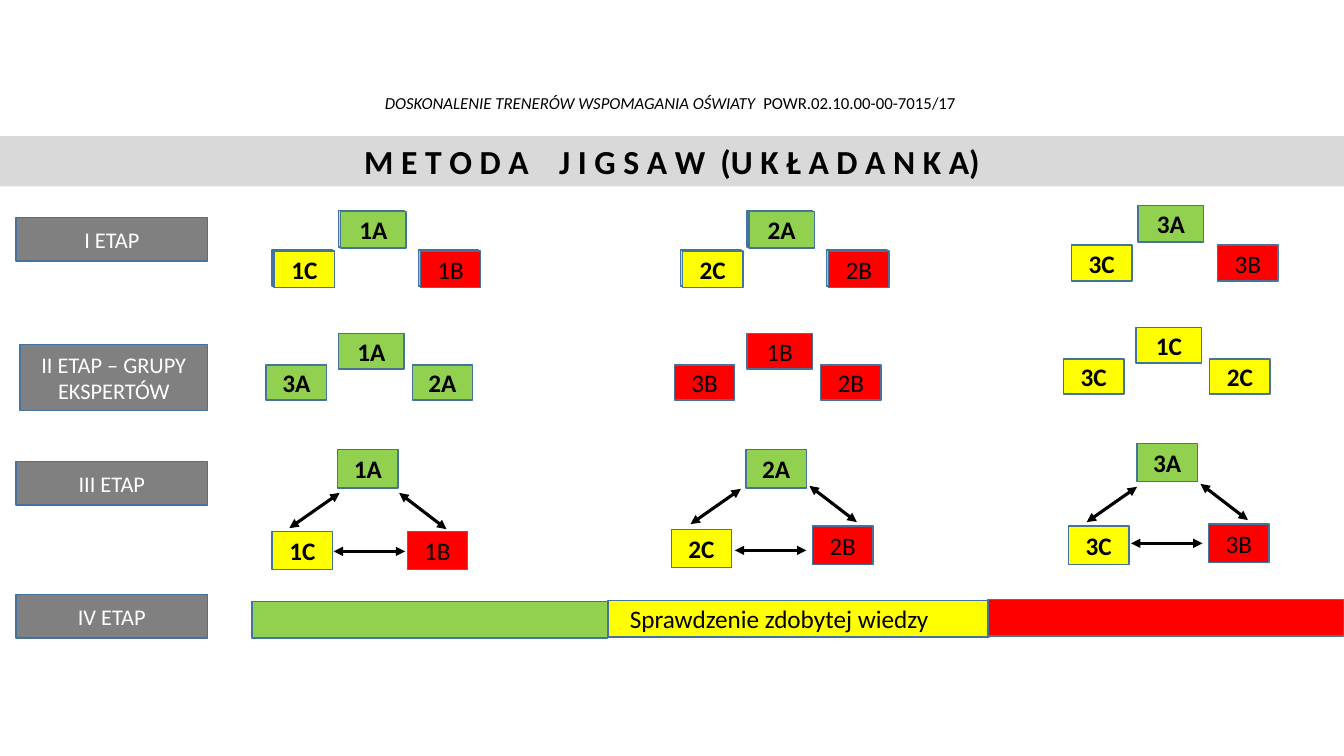
from dataclasses import dataclass

from lxml import etree
from pptx import Presentation
from pptx.dml.color import RGBColor
from pptx.enum.shapes import MSO_CONNECTOR, MSO_SHAPE
from pptx.enum.text import MSO_ANCHOR, PP_ALIGN
from pptx.oxml.ns import qn
from pptx.util import Inches, Pt

RECT = MSO_SHAPE.RECTANGLE
STRAIGHT = MSO_CONNECTOR.STRAIGHT
TOP, MIDDLE, BOTTOM = MSO_ANCHOR.TOP, MSO_ANCHOR.MIDDLE, MSO_ANCHOR.BOTTOM
LEFT, CENTER = PP_ALIGN.LEFT, PP_ALIGN.CENTER
CELL = Inches(0.1)
COLS, ROWS = 133.33, 75


@dataclass(frozen=True)
class Theme:
    font: str = "Calibri"
    black: str = "000000"
    white: str = "FFFFFF"
    gray: str = "808080"
    band: str = "D9D9D9"
    edge: str = "43739E"
    green: str = "92D050"
    red: str = "FF0000"
    yellow: str = "FFFF00"
    mint: str = "C5E0B4"
    blue: str = "9DC3E6"
    peach: str = "F8CBAD"
    small: int = 12
    stage: int = 16
    body: int = 18
    title: int = 24
    thin: float = 1
    thick: float = 2.25


THEME = Theme()
FILLS = {"A": THEME.green, "B": THEME.red, "C": THEME.yellow}
PALE = {"A": THEME.mint, "B": THEME.blue, "C": THEME.peach}

STAGES = [
    ("I ETAP", 1.6, 21.6, 19, 4.3),
    ("II ETAP – GRUPY EKSPERTÓW", 2, 34.2, 18.6, 6.5),
    ("III ETAP", 1.6, 45.8, 19, 4.3),
    ("IV ETAP", 1.6, 59, 19, 4.3),
]
STARTS = [(27.2, 21), (67.7, 21), (106.3, 20.4)]
EXPERTS = [("3A", "1A", "2A"), ("3B", "1B", "2B"), ("3C", "1C", "2C")]
TRIOS = [
    [(27, 52.7), (33.5, 44.6), (40.4, 52.7)],
    [(66.6, 52.5), (74, 44.6), (80.6, 52.2)],
    [(106, 52.2), (112.8, 44), (119.9, 52)],
]
SPANS = [(7.1, 0), (4.7, 3.6), (5, -3.5)]
TAILS = [
    [(33.1, 54.7), (39.6, 48.9), (28.7, 52.4)],
    [(72.9, 54.6), (80.3, 48.2), (68.5, 52)],
    [(112.2, 53.9), (119.1, 48), (107.8, 51.8)],
]
BARS = [
    (25, 59.7, 35.3, THEME.green),
    (60.3, 59.6, 37.8, THEME.yellow),
    (98, 59.5, 35.3, THEME.red),
]


def grid(*cells):
    return [round(cell * CELL) for cell in cells]


def color(code):
    return RGBColor.from_string(code)


def write(shape, parts, size, tint=THEME.black, bold=False, align=CENTER,
          anchor=MIDDLE):
    frame = shape.text_frame
    frame.word_wrap = True
    frame.vertical_anchor = anchor
    line = frame.paragraphs[0]
    line.alignment = align
    font = line.font
    font.name, font.size, font.bold = THEME.font, Pt(size), bold
    font.color.rgb = color(tint)
    for words, gap in parts:
        run = line.add_run()
        run.text = words
        if gap:
            run._r.get_or_add_rPr().set("spc", str(round(gap * 100)))
    return line


def block(slide, x, y, wide, high, fill, edge=THEME.edge):
    shape = slide.shapes.add_shape(RECT, *grid(x, y, wide, high))
    shape.shadow.inherit = False
    shape.fill.solid()
    shape.fill.fore_color.rgb = color(fill)
    if edge:
        shape.line.color.rgb = color(edge)
        shape.line.width = Pt(THEME.thin)
    else:
        shape.line.fill.background()
    return shape


def card(slide, label, x, y, wide, high):
    kind = label[-1]
    shape = block(slide, x, y, wide, high, FILLS[kind])
    write(shape, [(label, 0)], THEME.body, bold=kind != "B")


def arrow(slide, x, y, run, rise):
    link = slide.shapes.add_connector(STRAIGHT, *grid(x, y, x + run, y + rise))
    link.line.color.rgb = color(THEME.black)
    link.line.width = Pt(THEME.thick)
    props = link._element.spPr
    for tag in ("a:headEnd", "a:tailEnd"):
        etree.SubElement(props.find(qn("a:ln")), qn(tag), type="triangle")
    etree.SubElement(props, qn("a:effectLst"))


def heading(slide):
    box = slide.shapes.add_textbox(*grid(9.2, 0, 114.6, 12.2))
    box.text_frame.margin_bottom = CELL
    parts = [("DOSKONALENIE TRENERÓW WSPOMAGANIA OŚWIATY", 0), (" ", 2.7),
             ("POWR.02.10.00-00-7015/17", 0)]
    line = write(box, parts, THEME.small, anchor=BOTTOM)
    line.line_spacing = 0.9
    line.runs[0].font.italic = True
    bar = block(slide, 0, 13.5, COLS, 5, THEME.band, None)
    parts = [("M E T O D A", 0), (" ", 16.3), ("J I G S A W", 0), (" ", 5.4),
             ("(U K Ł A D A N K A)", 0)]
    write(bar, parts, THEME.title, bold=True, anchor=TOP)


def groups(slide):
    for team, (x, y) in enumerate(STARTS, 1):
        spots = [("C", 0, 3.9, 6), ("A", 6.6, 0, 6.5), ("B", 14.5, 3.9, 6)]
        for kind, right, down, wide in spots:
            if team < 3:
                block(slide, x + right - 0.2, y + down - 0.1, wide, 3.6,
                      PALE[kind])
            card(slide, f"{team}{kind}", x + right, y + down, wide, 3.6)


def experts(slide):
    spots = [(0, 3.1, 6), (7.2, 0, 6.5), (14.5, 3.1, 6)]
    for (x, y), names in zip(STARTS, EXPERTS):
        for name, (right, down, wide) in zip(names, spots):
            card(slide, name, x - 0.8 + right, y + 12.1 + down, wide, 3.5)


def sharing(slide):
    for team, (spots, tails) in enumerate(zip(TRIOS, TAILS), 1):
        for kind, spot in zip("CAB", spots):
            card(slide, f"{team}{kind}", *spot, 6, 3.8)
        for tail, span in zip(tails, SPANS):
            arrow(slide, *tail, *span)


def review(slide):
    for x, y, wide, fill in BARS:
        block(slide, x, y, wide, 3.6, fill)
    box = slide.shapes.add_textbox(*grid(61.5, 59.4, 35.3, 4))
    write(box, [("Sprawdzenie zdobytej wiedzy", 0)], THEME.body, align=LEFT,
          anchor=TOP)


def main():
    deck = Presentation()
    deck.slide_width, deck.slide_height = grid(COLS, ROWS)
    slide = deck.slides.add_slide(deck.slide_layouts[6])
    heading(slide)
    for label, *place in STAGES:
        shape = block(slide, *place, THEME.gray)
        write(shape, [(label, 0)], THEME.stage, THEME.white)
    groups(slide)
    experts(slide)
    sharing(slide)
    review(slide)
    deck.save("out.pptx")


if __name__ == "__main__":
    main()
